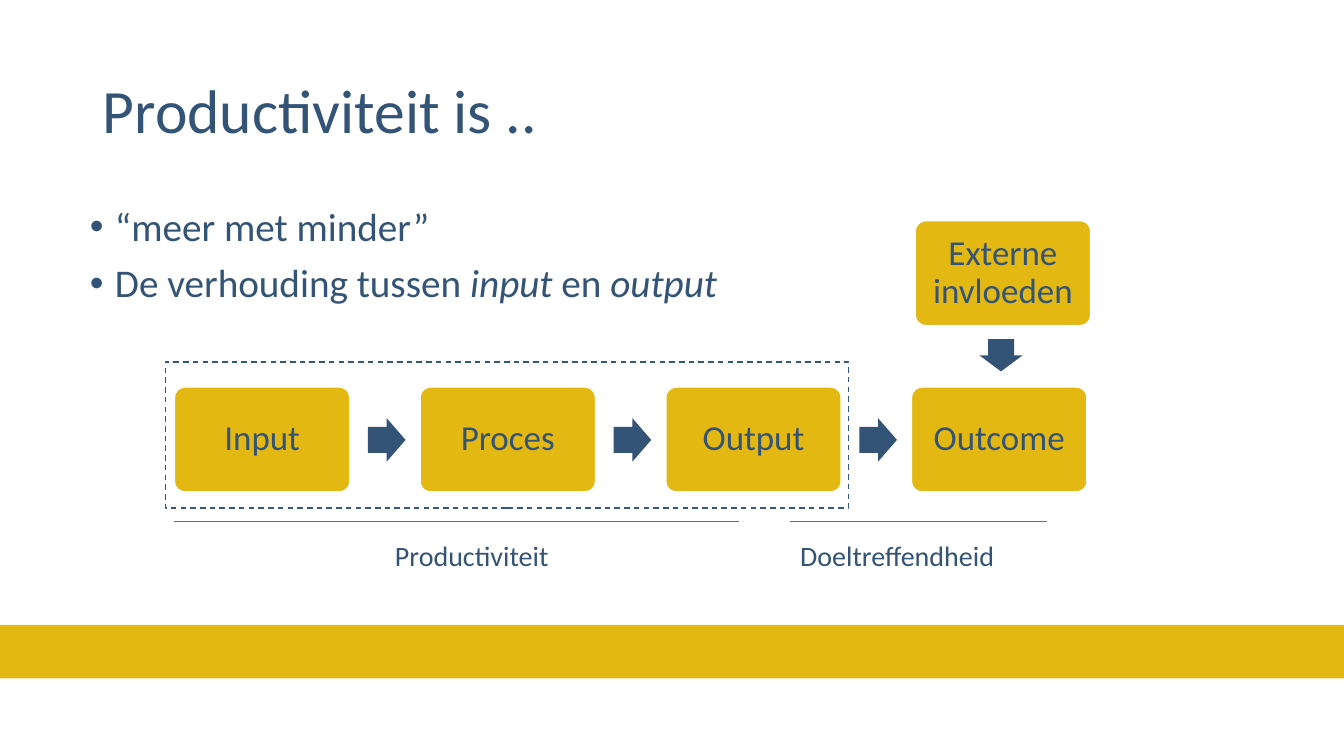
import dataclasses

import lxml.etree
import pptx
import pptx.dml.color
import pptx.enum.dml
import pptx.enum.shapes
import pptx.enum.text
import pptx.oxml.ns
import pptx.util

WIDTH = pptx.util.Inches(13.333)
HEIGHT = pptx.util.Inches(7.5)
NAVY, GOLD, WHITE = "335377", "E3B813", "FFFFFF"
RULE, FRAME = "4472C4", "325491"
FONT = "Calibri"
SHAPE = pptx.enum.shapes.MSO_SHAPE
ALIGN = pptx.enum.text.PP_ALIGN
ANCHOR = pptx.enum.text.MSO_ANCHOR

FLOW_LEFT, FLOW_TOP, FLOW_PITCH = 12.98, 51.2, 18.28
BOX_W, BOX_H = 13.05, 13.87
ARROW_OFFSET, ARROW_TOP = 14.4, 55.33
ARROW_W, ARROW_H = 2.8, 5.73
RULE_TOP, LABEL_TOP, LABEL_H = 68.93, 70.53, 5.87


@dataclasses.dataclass(frozen=True)
class Area:
    """Position and size in percent of the slide."""
    left: float
    top: float
    width: float
    height: float

    def emu(self) -> tuple[int, int, int, int]:
        return (across(self.left), down(self.top), across(self.width), down(self.height))


@dataclasses.dataclass(frozen=True)
class Span:
    label: str
    start: float
    end: float
    label_left: float
    label_width: float


STEPS = ["Input", "Proces", "Output", "Outcome"]
SPANS = [
    Span("Productiviteit", FLOW_LEFT, 54.98, 28.65, 13.05),
    Span("Doeltreffendheid", 58.8, 77.93, 58.8, 16.13),
]
BULLETS = [
    [("“meer met minder”", False)],
    [("De verhouding tussen ", False), ("input", True), (" en ", False), ("output", True)],
]


def across(share: float) -> int:
    return round(WIDTH * share / 100)


def down(share: float) -> int:
    return round(HEIGHT * share / 100)


def rgb(value: str) -> pptx.dml.color.RGBColor:
    return pptx.dml.color.RGBColor.from_string(value)


def style_run(r, size: float, italic: bool = False) -> None:
    r.font.name = FONT
    r.font.size = pptx.util.Pt(size)
    r.font.italic = italic
    r.font.color.rgb = rgb(NAVY)


def place(sp, area: Area) -> None:
    sp.left, sp.top, sp.width, sp.height = area.emu()


def add_shape(s, kind, area: Area, fill: str = "", line: str = ""):
    sp = s.shapes.add_shape(kind, *area.emu())
    sp.shadow.inherit = False
    if fill:
        sp.fill.solid()
        sp.fill.fore_color.rgb = rgb(fill)
    else:
        sp.fill.background()
    if line:
        sp.line.color.rgb = rgb(line)
        sp.line.width = pptx.util.Pt(1)
    else:
        sp.line.fill.background()
    return sp


def add_box(s, text: str, left: float, top: float) -> None:
    sp = add_shape(s, SHAPE.ROUNDED_RECTANGLE, Area(left, top, BOX_W, BOX_H), GOLD, WHITE)
    sp.adjustments[0] = 0.1
    tf = sp.text_frame
    tf.text = text
    tf.word_wrap = True
    tf.vertical_anchor = ANCHOR.MIDDLE
    tf.margin_left = tf.margin_right = pptx.util.Inches(0.13)
    tf.margin_top = tf.margin_bottom = pptx.util.Inches(0.13)
    p = tf.paragraphs[0]
    p.alignment = ALIGN.CENTER
    p.line_spacing = 0.9
    style_run(p.runs[0], 25)


def add_arrow(s, area: Area, rotation: float = 0) -> None:
    sp = add_shape(s, SHAPE.RIGHT_ARROW, area, NAVY)
    sp.adjustments[0] = 0.6
    sp.adjustments[1] = 0.5
    sp.rotation = rotation


def add_span(s, span: Span) -> None:
    y = down(RULE_TOP)
    line = s.shapes.add_connector(
        pptx.enum.shapes.MSO_CONNECTOR.STRAIGHT, across(span.end), y, across(span.start), y)
    line.line.color.rgb = rgb(RULE)
    line.line.width = pptx.util.Pt(0.5)
    lxml.etree.SubElement(line._element.spPr, pptx.oxml.ns.qn("a:effectLst"))
    area = Area(span.label_left, LABEL_TOP, span.label_width, LABEL_H)
    tf = s.shapes.add_textbox(*area.emu()).text_frame
    tf.text = span.label
    tf.word_wrap = False
    tf.auto_size = pptx.enum.text.MSO_AUTO_SIZE.SHAPE_TO_FIT_TEXT
    style_run(tf.paragraphs[0].runs[0], 20)


def fill_title(sp) -> None:
    place(sp, Area(6.9, 5.33, 86.25, 19.33))
    tf = sp.text_frame
    tf.text = "Productiviteit is .."
    tf.auto_size = pptx.enum.text.MSO_AUTO_SIZE.NONE
    tf.vertical_anchor = ANCHOR.MIDDLE
    p = tf.paragraphs[0]
    p.alignment = ALIGN.LEFT
    p.line_spacing = 0.9
    style_run(p.runs[0], 44)


def fill_bullets(sp) -> None:
    place(sp, Area(5.93, 26.8, 86.25, 55.87))
    tf = sp.text_frame
    tf.auto_size = pptx.enum.text.MSO_AUTO_SIZE.NONE
    for i, parts in enumerate(BULLETS):
        p = tf.add_paragraph() if i else tf.paragraphs[0]
        p.line_spacing = 0.9
        p.space_before = pptx.util.Pt(10 if i else 0)
        pPr = p._p.get_or_add_pPr()
        pPr.set("marL", str(pptx.util.Inches(0.25)))
        pPr.set("indent", str(-pptx.util.Inches(0.25)))
        lxml.etree.SubElement(pPr, pptx.oxml.ns.qn("a:buFont")).set("typeface", "Arial")
        lxml.etree.SubElement(pPr, pptx.oxml.ns.qn("a:buChar")).set("char", "•")
        for text, italic in parts:
            r = p.add_run()
            r.text = text
            style_run(r, 28, italic)


def main() -> None:
    prs = pptx.Presentation()
    prs.slide_width, prs.slide_height = WIDTH, HEIGHT
    s = prs.slides.add_slide(prs.slide_layouts[1])
    fill_title(s.shapes.title)
    fill_bullets(s.placeholders[1])
    add_shape(s, SHAPE.RECTANGLE, Area(0, 82.67, 100, 7.07), GOLD)
    for i, step in enumerate(STEPS):
        left = FLOW_LEFT + i * FLOW_PITCH
        add_box(s, step, left, FLOW_TOP)
        if i < len(STEPS) - 1:
            add_arrow(s, Area(left + ARROW_OFFSET, ARROW_TOP, ARROW_W, ARROW_H))
    add_arrow(s, Area(73.28, 44.13, 2.4, ARROW_H), 90)
    add_box(s, "Externe invloeden", 68.1, 29.2)
    for span in SPANS:
        add_span(s, span)
    frame = add_shape(s, SHAPE.RECTANGLE, Area(12.3, 47.87, 50.85, 19.33), line=FRAME)
    frame.line.dash_style = pptx.enum.dml.MSO_LINE.DASH
    prs.save("out.pptx")


if __name__ == "__main__":
    main()
